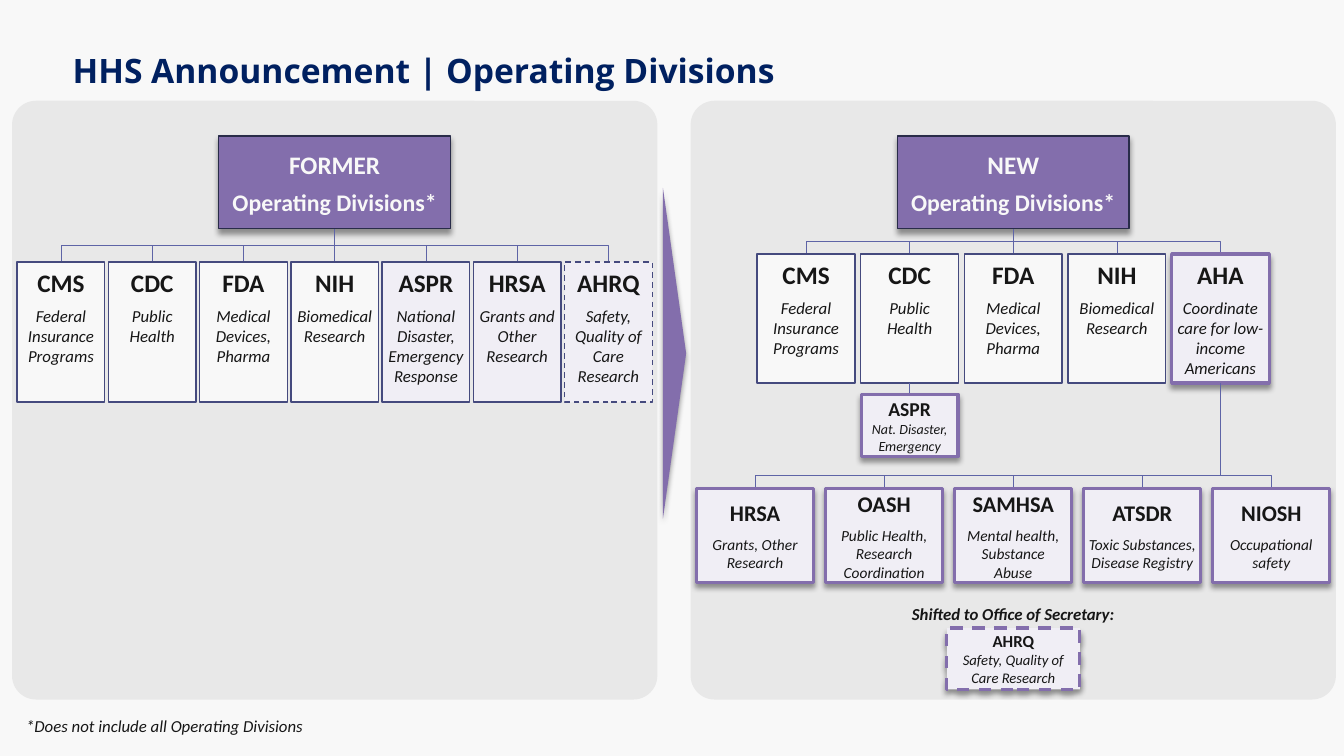
from dataclasses import dataclass
from typing import Optional

from lxml.etree import SubElement
from pptx import Presentation
from pptx.dml.color import RGBColor
from pptx.enum.dml import MSO_LINE
from pptx.enum.shapes import MSO_CONNECTOR as LINK, MSO_SHAPE as SHAPE
from pptx.enum.text import MSO_ANCHOR as ANCHOR, MSO_AUTO_SIZE as FIT, PP_ALIGN as ALIGN
from pptx.oxml.ns import qn
from pptx.util import Emu, Pt

PX = 9144
PAPER = RGBColor(0xF8, 0xF8, 0xF8)
PANEL = RGBColor(0xE8, 0xE8, 0xE8)
NAVY = RGBColor(0x00, 0x20, 0x60)
PURPLE = RGBColor(0x83, 0x6E, 0xAC)
LILAC = RGBColor(0xF0, 0xEE, 0xF5)
INDIGO = RGBColor(0x45, 0x4A, 0x7E)
MIDNIGHT = RGBColor(0x29, 0x2C, 0x49)
LINK_BLUE = RGBColor(0x5E, 0x64, 0xA6)
INK = RGBColor(0x16, 0x16, 0x16)


@dataclass(frozen=True)
class Look:
    """Fill, outline and shadow of a box."""
    fill: RGBColor
    line: Optional[RGBColor] = None
    width: float = 1
    dashed: bool = False
    shadow: bool = False


@dataclass(frozen=True)
class Type:
    """Sizes and placing of the text in a division card."""
    name: float
    role: float
    gap: int = 6
    anchor: ANCHOR = ANCHOR.MIDDLE


KEPT = Look(PAPER, INDIGO)
MOVED = Look(LILAC, INDIGO)
LEAVING = Look(LILAC, INDIGO, dashed=True)
CREATED = Look(LILAC, PURPLE, 2.25, shadow=True)
SHIFTED = Look(LILAC, PURPLE, 2.25, True, True)
HEADING = Look(PURPLE, MIDNIGHT, shadow=True)

FORMER = [
    ("CMS", "Federal Insurance Programs", KEPT, 1),
    ("CDC", "Public Health", KEPT, 1),
    ("FDA", "Medical Devices, Pharma", KEPT, 1),
    ("NIH", "Biomedical Research", KEPT, 1),
    ("ASPR", "National Disaster, Emergency Response", MOVED, 1),
    ("HRSA", "Grants and Other Research", MOVED, 1),
    ("AHRQ", "Safety, Quality of Care Research", LEAVING, 1),
]
NEW = [(*division[:3], 10) for division in FORMER[:4]] + [
    ("AHA", "Coordinate care for low-income Americans", CREATED, 0),
]
AHA_PARTS = [
    ("HRSA", "Grants, Other Research", CREATED, 10),
    ("OASH", "Public Health, Research Coordination", CREATED, 10),
    ("SAMHSA", "Mental health, Substance Abuse", CREATED, 10),
    ("ATSDR", "Toxic Substances, Disease Registry", CREATED, 2),
    ("NIOSH", "Occupational safety", CREATED, 10),
]


def px(*lengths):
    """Turn px lengths into EMU."""
    return [Emu(round(length * PX)) for length in lengths]


def add_box(slide, box, look, kind=SHAPE.RECTANGLE):
    """Draw a preset shape with the given look."""
    shape = slide.shapes.add_shape(kind, *px(*box))
    shape.shadow.inherit = False
    shape.fill.solid()
    shape.fill.fore_color.rgb = look.fill
    if look.line is None:
        shape.line.fill.background()
    else:
        shape.line.color.rgb = look.line
        shape.line.width = Pt(look.width)
    if look.dashed:
        shape.line.dash_style = MSO_LINE.DASH
    if look.shadow:
        effects = shape._element.spPr.find(qn("a:effectLst"))
        outer = SubElement(effects, qn("a:outerShdw"), blurRad=str(Pt(4)), dist=str(Pt(3)),
                           dir="5400000", algn="t", rotWithShape="0")
        black = SubElement(outer, qn("a:srgbClr"), val="000000")
        SubElement(black, qn("a:alpha"), val="40000")
    return shape


def write(shape, lines, color=INK, align=ALIGN.CENTER, anchor=ANCHOR.MIDDLE, inset=10, face="Calibri"):
    """Fill a shape with lines of (text, size, bold, italic, space after)."""
    frame = shape.text_frame
    frame.word_wrap = True
    frame.auto_size = FIT.NONE
    frame.vertical_anchor = anchor
    frame.margin_left, frame.margin_right, frame.margin_top, frame.margin_bottom = px(inset, inset, 5, 5)
    for index, (text, size, bold, italic, after) in enumerate(lines):
        paragraph = frame.add_paragraph() if index else frame.paragraphs[0]
        paragraph.text = text
        paragraph.alignment = align
        paragraph.space_before, paragraph.space_after = Pt(0), Pt(after)
        font = paragraph.font
        font.name, font.size, font.bold, font.italic = face, Pt(size), bold, italic
        font.color.rgb = color


def add_card(slide, box, name, role, look, style, inset):
    """Draw one division with its name and role."""
    write(add_box(slide, box, look),
          [(name, style.name, True, False, style.gap), (role, style.role, False, True, 6)],
          anchor=style.anchor, inset=inset)


def add_link(slide, child, parent, bend=0.5):
    """Join the top of a child to the bottom of its parent, with a bend if they are not in line."""
    (x, y), (parent_x, parent_y) = child, parent
    if x == parent_x:
        link = slide.shapes.add_connector(LINK.STRAIGHT, *px(x, y, parent_x, parent_y))
    else:
        side = 1 if x < parent_x else -1
        mid_x, mid_y = (x + parent_x) / 2, (y + parent_y) / 2
        half_w, half_h = side * (y - parent_y) / 2, abs(x - parent_x) / 2
        link = slide.shapes.add_connector(
            LINK.ELBOW, *px(mid_x + half_w, mid_y + half_h, mid_x - half_w, mid_y - half_h))
        properties = link._element.spPr
        properties.find(qn("a:xfrm")).set("rot", str((180 - side * 90) * 60000))
        guides = properties.find(qn("a:prstGeom")).get_or_add_avLst()
        SubElement(guides, qn("a:gd"), name="adj1", fmla=f"val {round(bend * 100000)}")
    link.line.color.rgb = LINK_BLUE
    link.line.width = Pt(0.5)
    SubElement(link._element.spPr, qn("a:effectLst"))


def add_row(slide, box, card_width, divisions, style, parent, bend=0.5):
    """Spread divisions evenly over a box and link each to the parent; return their centres."""
    left, top, width, height = box
    pitch = (width - card_width) / (len(divisions) - 1)
    centres = []
    for index, (name, role, look, inset) in enumerate(divisions):
        x = left + index * pitch
        centres.append(x + card_width / 2)
        add_link(slide, (centres[-1], top), parent, bend)
        add_card(slide, (x, top, card_width, height), name, role, look, style, inset)
    return centres


def add_panel(slide, box, era):
    """Draw a rounded panel with its heading; return the point below the heading."""
    left, top, width, _ = box
    add_box(slide, box, Look(PANEL), SHAPE.ROUNDED_RECTANGLE).adjustments[0] = 0.04
    heading = add_box(slide, (left + width / 2 - 115, top + 35, 230, 92), HEADING)
    write(heading, [(era, 18, True, False, 6), ("Operating Divisions*", 17, True, False, 6)], PAPER)
    return left + width / 2, top + 127


def add_former(slide, box):
    """Draw the former divisions."""
    left, top, width, _ = box
    heading = add_panel(slide, box, "FORMER")
    add_row(slide, (left + 5, top + 160, width - 10, 139), 87, FORMER,
            Type(18, 12, anchor=ANCHOR.TOP), heading)


def add_new(slide, box):
    """Draw the new divisions, the parts of AHA and the shifted office."""
    left, top, width, _ = box
    heading = add_panel(slide, box, "NEW")
    centres = add_row(slide, (left + 66, top + 152, width - 132, 128), 97, NEW,
                      Type(18, 12, anchor=ANCHOR.TOP), heading)
    cdc, aha = centres[1], centres[-1]
    add_link(slide, (cdc, top + 291), (cdc, top + 280))
    add_card(slide, (cdc - 48, top + 291, 96, 62), "ASPR", "Nat. Disaster, Emergency",
             CREATED, Type(14, 10, 0), 0)
    add_row(slide, (left + 6, top + 385, width - 12, 93), 116, AHA_PARTS, Type(16, 11),
            (aha, top + 280), 0.13)
    middle = left + width / 2
    caption = add_box(slide, (middle - 137, top + 495, 274, 28), Look(PANEL))
    write(caption, [("Shifted to Office of Secretary:", 12, True, True, 6)])
    add_card(slide, (middle - 66, top + 523, 132, 61), "AHRQ", "Safety, Quality of Care Research",
             SHIFTED, Type(12, 10.5, 0), 10)


def add_title(slide, box):
    """Place and format the slide title."""
    title = slide.shapes.title
    title.left, title.top, title.width, title.height = px(*box)
    write(title, [("HHS Announcement | Operating Divisions", 24, True, False, 0)], NAVY,
          ALIGN.LEFT, ANCHOR.TOP, face="Open Sans")


def add_footnote(slide, box):
    """Write the footnote."""
    write(slide.shapes.add_textbox(*px(*box)),
          [("*Does not include all Operating Divisions", 12, False, True, 6)], align=ALIGN.LEFT)


def main():
    """Build the slide and save it."""
    deck = Presentation()
    deck.slide_width, deck.slide_height = px(1333, 750)
    slide = deck.slides.add_slide(deck.slide_layouts[5])
    slide.background.fill.solid()
    slide.background.fill.fore_color.rgb = PAPER
    add_title(slide, (62, 44, 1209, 50))
    add_former(slide, (12, 100, 640, 594))
    add_new(slide, (685, 100, 640, 594))
    arrow = add_box(slide, (505, 339, 328, 23), Look(PURPLE, shadow=True), SHAPE.ISOSCELES_TRIANGLE)
    arrow.rotation = 90
    add_footnote(slide, (16, 706, 529, 28))
    deck.save("out.pptx")


if __name__ == "__main__":
    main()
